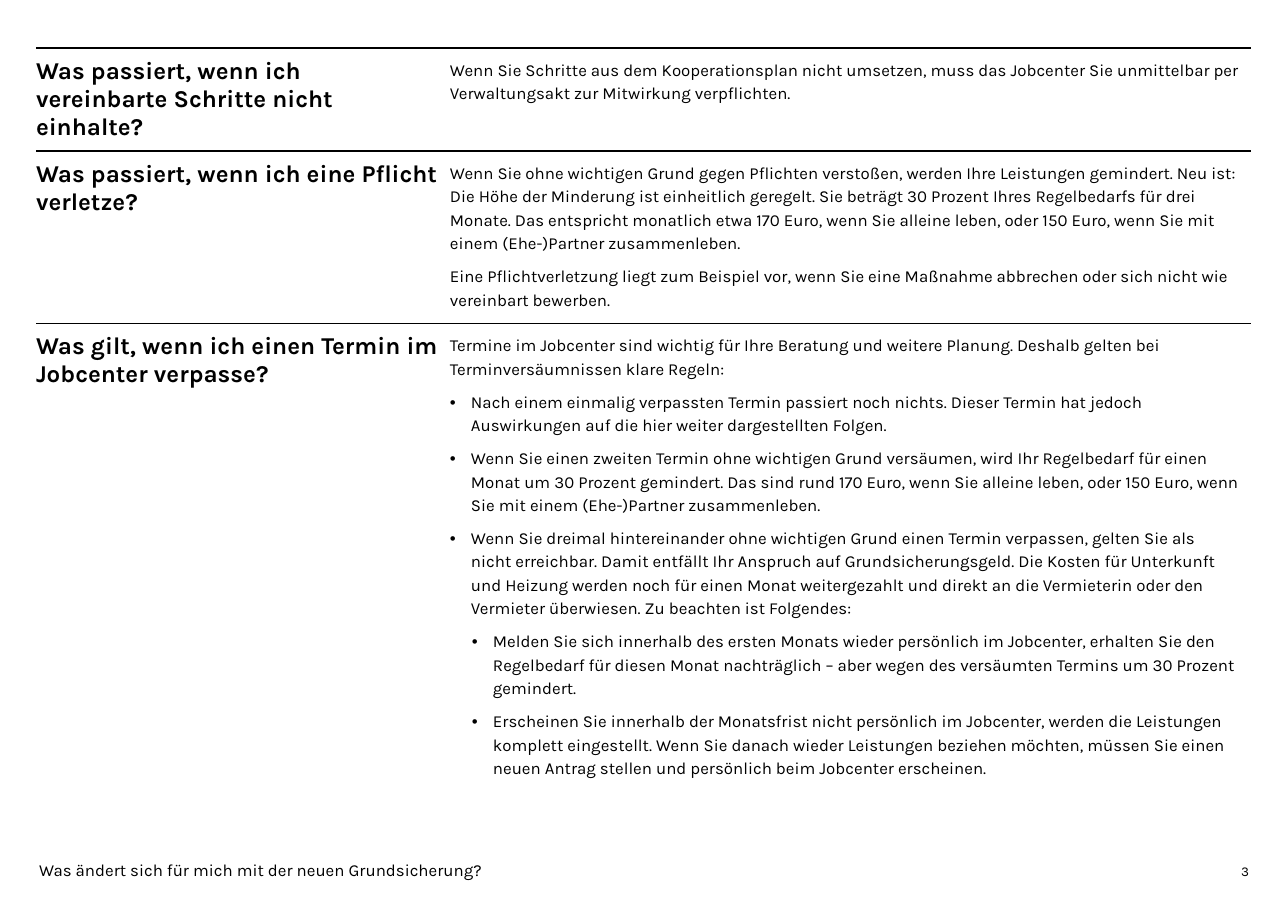
from dataclasses import dataclass

from lxml.etree import SubElement
from pptx import Presentation
from pptx.dml.color import RGBColor
from pptx.enum.text import MSO_ANCHOR as Anchor, PP_ALIGN as Align
from pptx.oxml.ns import qn
from pptx.util import Pt

PX = 8298
FONT = "Karla"
COLORS = {"ink": "000000", "paper": "FFFFFF"}
BODY_SIZE, HEADING_SIZE, PAGE_SIZE = 11, 15.8, 8.8
HANGING = 21
BULLET_MARGINS = (0, 21, 43)
COLUMNS = (414, 801)


@dataclass(frozen=True)
class Entry:
    text: str
    depth: int = 0


@dataclass(frozen=True)
class Section:
    heading: str
    height: int
    entries: tuple[Entry, ...]


@dataclass(frozen=True)
class Footer:
    text: str
    left: int
    top: int
    width: int
    size: float
    align: Align


SECTIONS = (
    Section("Was passiert, wenn ich vereinbarte Schritte nicht einhalte?", 103, (
        Entry("Wenn Sie Schritte aus dem Kooperationsplan nicht umsetzen, muss das Jobcenter Sie "
              "unmittelbar per Verwaltungsakt zur Mitwirkung verpflichten."),
    )),
    Section("Was passiert, wenn ich eine Pflicht verletze?", 172, (
        Entry("Wenn Sie ohne wichtigen Grund gegen Pflichten verstoßen, werden Ihre Leistungen "
              "gemindert. Neu ist: Die Höhe der Minderung ist einheitlich geregelt. Sie beträgt "
              "30 Prozent Ihres Regelbedarfs für drei Monate. Das entspricht monatlich etwa "
              "170 Euro, wenn Sie alleine leben, oder 150 Euro, wenn Sie mit einem (Ehe-)Partner "
              "zusammenleben."),
        Entry("Eine Pflichtverletzung liegt zum Beispiel vor, wenn Sie eine Maßnahme abbrechen "
              "oder sich nicht wie vereinbart bewerben."),
    )),
    Section("Was gilt, wenn ich einen Termin im Jobcenter verpasse?", 453, (
        Entry("Termine im Jobcenter sind wichtig für Ihre Beratung und weitere Planung. Deshalb "
              "gelten bei Terminversäumnissen klare Regeln:"),
        Entry("Nach einem einmalig verpassten Termin passiert noch nichts. Dieser Termin hat "
              "jedoch Auswirkungen auf die hier weiter dargestellten Folgen.", 1),
        Entry("Wenn Sie einen zweiten Termin ohne wichtigen Grund versäumen, wird Ihr Regelbedarf "
              "für einen Monat um 30 Prozent gemindert. Das sind rund 170 Euro, wenn Sie alleine "
              "leben, oder 150 Euro, wenn Sie mit einem (Ehe-)Partner zusammenleben.", 1),
        Entry("Wenn Sie dreimal hintereinander ohne wichtigen Grund einen Termin verpassen, gelten "
              "Sie als nicht erreichbar. Damit entfällt Ihr Anspruch auf Grundsicherungsgeld. Die "
              "Kosten für Unterkunft und Heizung werden noch für einen Monat weitergezahlt und "
              "direkt an die Vermieterin oder den Vermieter überwiesen. Zu beachten ist "
              "Folgendes:", 1),
        Entry("Melden Sie sich innerhalb des ersten Monats wieder persönlich im Jobcenter, "
              "erhalten Sie den Regelbedarf für diesen Monat nachträglich – aber wegen des "
              "versäumten Termins um 30 Prozent gemindert.", 2),
        Entry("Erscheinen Sie innerhalb der Monatsfrist nicht persönlich im Jobcenter, werden die "
              "Leistungen komplett eingestellt. Wenn Sie danach wieder Leistungen beziehen "
              "möchten, müssen Sie einen neuen Antrag stellen und persönlich beim Jobcenter "
              "erscheinen.", 2),
    )),
)

FOOTERS = (
    Footer("Was ändert sich für mich mit der neuen Grundsicherung?", 39, 855, 833, BODY_SIZE,
           Align.LEFT),
    Footer("3", 1078, 854, 171, PAGE_SIZE, Align.RIGHT),
)


def set_font(para, size: float, bold: bool = False) -> None:
    para.font.name = FONT
    para.font.size = Pt(size)
    para.font.bold = bold
    para.font.color.rgb = RGBColor.from_string(COLORS["ink"])


def add_bullet(para, depth: int) -> None:
    para.level = depth - 1
    properties = para._p.get_or_add_pPr()
    properties.set("marL", str(BULLET_MARGINS[depth] * PX))
    properties.set("indent", str(-HANGING * PX))
    SubElement(properties, qn("a:buFont"), typeface="Arial")
    SubElement(properties, qn("a:buChar"), char="•")


def style_cell(cell, bottom: int, rules: set[str]) -> None:
    cell.margin_left, cell.margin_top = 0, 9 * PX
    cell.margin_right, cell.margin_bottom = 11 * PX, bottom * PX
    cell.vertical_anchor = Anchor.TOP
    properties = cell._tc.get_or_add_tcPr()
    for side in ("lnL", "lnR", "lnT", "lnB"):
        line = SubElement(properties, qn(f"a:{side}"), w=str(Pt(1)))
        if side in rules:
            fill = SubElement(line, qn("a:solidFill"))
            SubElement(fill, qn("a:srgbClr"), val=COLORS["ink"])
        else:
            SubElement(line, qn("a:noFill"))
    cell.fill.background()


def fill_answer(cell, entries: tuple[Entry, ...]) -> None:
    frame = cell.text_frame
    for index, entry in enumerate(entries):
        para = frame.add_paragraph() if index else frame.paragraphs[0]
        para.text = entry.text
        para.line_spacing = 1.2
        para.space_after = Pt(6)
        if entry.depth:
            add_bullet(para, entry.depth)
        set_font(para, BODY_SIZE)


def add_sections(page) -> None:
    height = sum(section.height for section in SECTIONS)
    table = page.shapes.add_table(len(SECTIONS), len(COLUMNS), 36 * PX, 48 * PX,
                                  sum(COLUMNS) * PX, height * PX).table
    table.first_row = table.horz_banding = False
    for column, width in zip(table.columns, COLUMNS):
        column.width = width * PX
    for index, section in enumerate(SECTIONS):
        table.rows[index].height = section.height * PX
        heading, answer = table.cell(index, 0), table.cell(index, 1)
        rules = {"lnT"} if section is SECTIONS[-1] else {"lnT", "lnB"}
        style_cell(heading, 9, rules)
        style_cell(answer, 13, rules)
        heading.text = section.heading
        set_font(heading.text_frame.paragraphs[0], HEADING_SIZE, True)
        fill_answer(answer, section.entries)


def add_footer(page, footer: Footer) -> None:
    box = page.shapes.add_textbox(footer.left * PX, footer.top * PX, footer.width * PX, 25 * PX)
    frame = box.text_frame
    frame.word_wrap = True
    frame.vertical_anchor = Anchor.BOTTOM
    frame.margin_left = frame.margin_top = frame.margin_right = frame.margin_bottom = 0
    para = frame.paragraphs[0]
    para.text = footer.text
    para.alignment = footer.align
    set_font(para, footer.size)


def main() -> None:
    deck = Presentation()
    deck.slide_width, deck.slide_height = 1288 * PX, 911 * PX
    page = deck.slides.add_slide(deck.slide_layouts[6])
    page.background.fill.solid()
    page.background.fill.fore_color.rgb = RGBColor.from_string(COLORS["paper"])
    add_sections(page)
    for footer in FOOTERS:
        add_footer(page, footer)
    deck.save("out.pptx")


if __name__ == "__main__":
    main()
